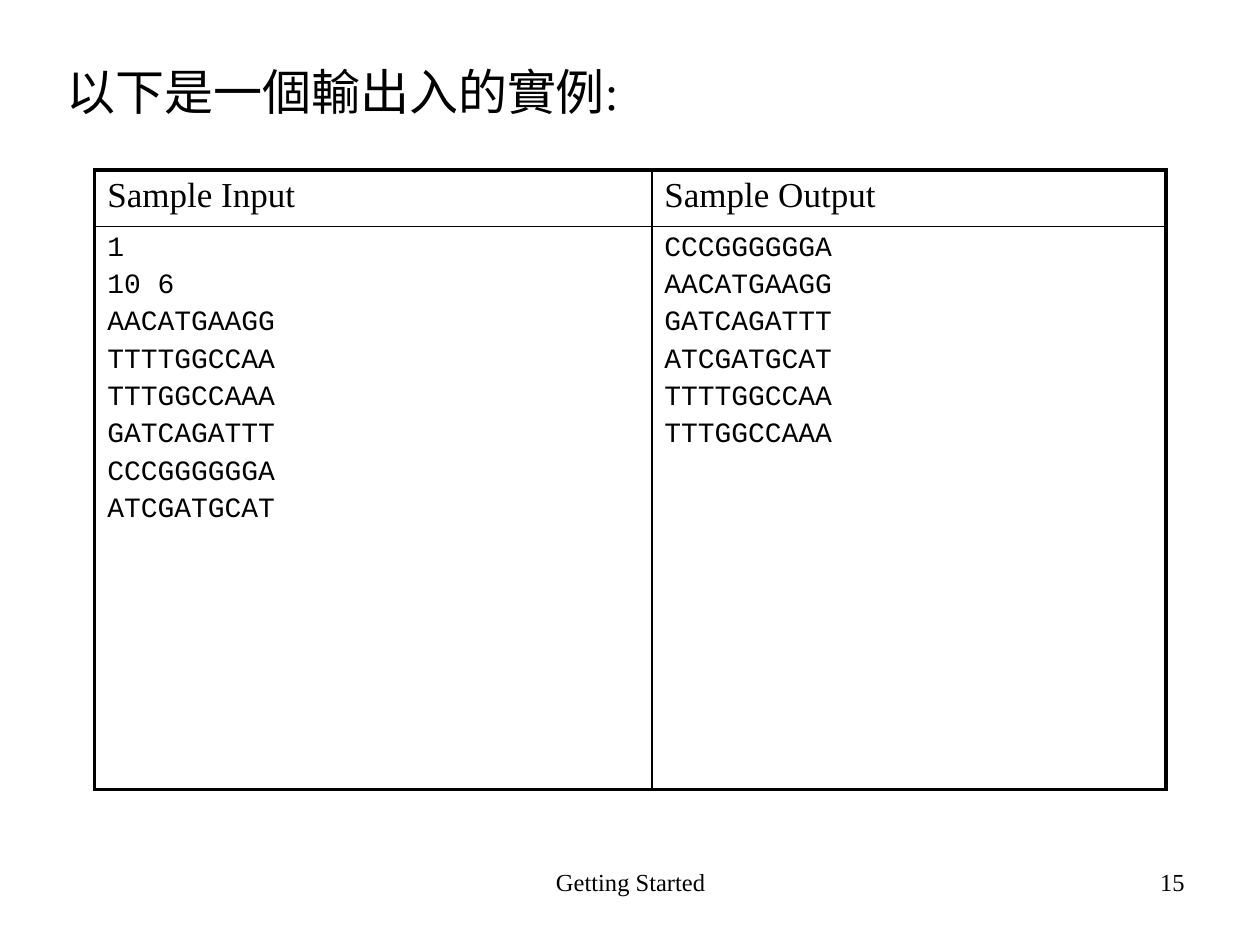
from lxml import etree
from pptx import Presentation
from pptx.dml.color import RGBColor
from pptx.enum.text import MSO_ANCHOR, MSO_AUTO_SIZE, PP_ALIGN
from pptx.oxml.ns import qn
from pptx.util import Cm, Pt

LEFT, CENTER, RIGHT = PP_ALIGN.LEFT, PP_ALIGN.CENTER, PP_ALIGN.RIGHT
TOP = MSO_ANCHOR.TOP
NO_AUTOFIT = MSO_AUTO_SIZE.NONE

BLACK = RGBColor(0x00, 0x00, 0x00)
SERIF = "Times New Roman"
MONO = "Courier New"
OUTER, INNER = Pt(2.25), Pt(1)
TITLE_ONLY = 5

SAMPLES = {
    "Sample Input": [
        "1", "10 6", "AACATGAAGG", "TTTTGGCCAA", "TTTGGCCAAA",
        "GATCAGATTT", "CCCGGGGGGA", "ATCGATGCAT",
    ],
    "Sample Output": [
        "CCCGGGGGGA", "AACATGAAGG", "GATCAGATTT",
        "ATCGATGCAT", "TTTTGGCCAA", "TTTGGCCAAA",
    ],
}


def write_lines(frame, lines, size, font=SERIF, align=LEFT, spacing=0.2):
    """Write one paragraph per line; spacing is a share of the text size."""
    frame.word_wrap = True
    for index, line in enumerate(lines):
        para = frame.paragraphs[0] if index == 0 else frame.add_paragraph()
        para.alignment = align
        para.space_before = Pt(size * spacing)
        span = para.add_run()
        span.text = line
        span.font.name = font
        span.font.size = Pt(size)
        span.font.color.rgb = BLACK


def place_title(page, box, text):
    title = page.shapes.title
    title.left, title.top, title.width, title.height = box
    frame = title.text_frame
    frame.auto_size = NO_AUTOFIT
    frame.vertical_anchor = TOP
    write_lines(frame, [text], 28)


def set_borders(cell, widths):
    """Draw black cell borders, given as widths by side (L, R, T, B)."""
    properties = cell._tc.get_or_add_tcPr()
    for side, width in widths.items():
        line = etree.SubElement(properties, qn(f"a:ln{side}"), w=str(int(width)))
        fill = etree.SubElement(line, qn("a:solidFill"))
        etree.SubElement(fill, qn("a:srgbClr"), val=str(BLACK))


def place_samples(page, box, column_widths, row_heights):
    rows, columns = len(row_heights), len(column_widths)
    table = page.shapes.add_table(rows, columns, *box).table
    table.first_row = table.horz_banding = False
    for column, width in zip(table.columns, column_widths):
        column.width = width
    for row, height in zip(table.rows, row_heights):
        row.height = height

    for column, (heading, lines) in enumerate(SAMPLES.items()):
        write_lines(table.cell(0, column).text_frame, [heading], 20)
        write_lines(table.cell(1, column).text_frame, lines, 16, MONO)
        for row in range(rows):
            cell = table.cell(row, column)
            set_borders(cell, {
                "L": OUTER if column == 0 else INNER,
                "R": OUTER if column == columns - 1 else INNER,
                "T": OUTER if row == 0 else INNER,
                "B": OUTER if row == rows - 1 else INNER,
            })
            cell.fill.background()


def place_footer(page, box, text, align):
    frame = page.shapes.add_textbox(*box).text_frame
    write_lines(frame, [text], 14, align=align, spacing=0)


def main():
    deck = Presentation()
    deck.slide_width, deck.slide_height = Cm(25.4), Cm(19.05)
    page = deck.slides.add_slide(deck.slide_layouts[TITLE_ONLY])

    place_title(page, (Cm(1.09), Cm(1.12), Cm(22.86), Cm(1.8)),
                "以下是一個輸出入的實例:")

    column_widths = Cm(11.23), Cm(10.37)
    row_heights = Cm(1.14), Cm(11.35)
    place_samples(page, (Cm(1.91), Cm(3.43), sum(column_widths), sum(row_heights)),
                  column_widths, row_heights)

    footer_top, footer_height = Cm(17.35), Cm(1.32)
    place_footer(page, (Cm(8.69), footer_top, Cm(8.05), footer_height),
                 "Getting Started", CENTER)
    place_footer(page, (Cm(18.21), footer_top, Cm(5.92), footer_height),
                 "15", RIGHT)

    deck.save("out.pptx")


if __name__ == "__main__":
    main()
